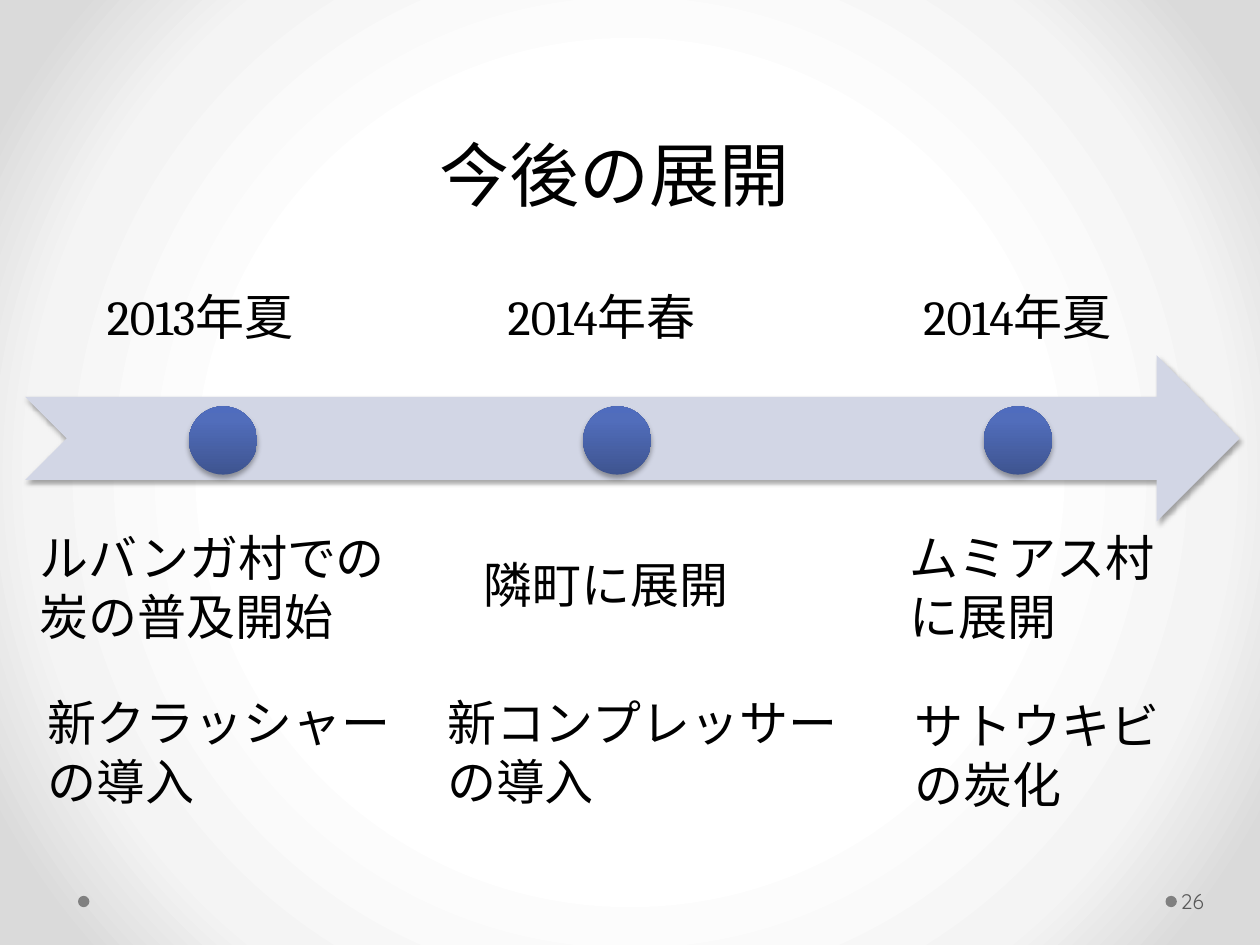
from pptx import Presentation
from pptx.dml.color import RGBColor
from pptx.enum.shapes import MSO_SHAPE as SHAPE
from pptx.enum.text import MSO_ANCHOR as ANCHOR, MSO_AUTO_SIZE as AUTOSIZE, PP_ALIGN as ALIGN
from pptx.oxml import parse_xml
from pptx.oxml.ns import nsdecls, qn
from pptx.util import Pt

rgb = RGBColor.from_string


def set_gradient(fill, element, stops, direction):
    fill.gradient()
    old = element.find(".//" + qn("a:gradFill"))
    gs = "".join(f'<a:gs pos="{pos * 1000}"><a:srgbClr val="{c}"/></a:gs>' for pos, c in stops)
    new = parse_xml(f'<a:gradFill {nsdecls("a")} rotWithShape="1">'
                    f'<a:gsLst>{gs}</a:gsLst>{direction}</a:gradFill>')
    old.getparent().replace(old, new)


def write_text(sp, box, text, size, font="Cambria", color="000000"):
    sp.left, sp.top, sp.width, sp.height = [Pt(v) for v in box]
    tf = sp.text_frame
    tf.text = text
    tf.word_wrap = True
    tf.auto_size = AUTOSIZE.SHAPE_TO_FIT_TEXT
    tf.vertical_anchor = ANCHOR.TOP
    for p in tf.paragraphs:
        p.alignment = ALIGN.LEFT
        for r in p.runs:
            r.font.name, r.font.size = font, Pt(size)
            r.font.color.rgb = rgb(color)
    return tf


prs = Presentation()
prs.slide_width, prs.slide_height = Pt(720), Pt(540)
s = prs.slides.add_slide(prs.slide_layouts[5])

# Background
set_gradient(s.background.fill, s.element,
             [(50, "FFFFFF"), (76, "F4F4F4"), (92, "DADADA")],
             '<a:path path="circle"><a:fillToRect l="50000" t="50000" r="50000" b="50000"/></a:path>')

# Title
write_text(s.shapes.title, (244, 71.3, 217.4, 55.7), "今後の展開", 40)

# Footer dots and page number
for x in (666, 44.6):
    sp = s.shapes.add_shape(SHAPE.OVAL, Pt(x), Pt(511.9), Pt(6.5), Pt(6.5))
    sp.fill.solid()
    sp.fill.fore_color.rgb = rgb("808080")
    sp.line.fill.background()
    sp.shadow.inherit = False
number = s.shapes.add_textbox(0, 0, 0, 0)
tf = write_text(number, (672.5, 500.4, 43.9, 28.8), "26", 12, "Quicksand", "595959")
tf.auto_size = AUTOSIZE.NONE
tf.vertical_anchor = ANCHOR.MIDDLE
tf.margin_left = Pt(2.2)

# Timeline arrow with its milestones
arrow = s.shapes.add_shape(SHAPE.NOTCHED_RIGHT_ARROW, Pt(14.4), Pt(203), Pt(694), Pt(95))
arrow.fill.solid()
arrow.fill.fore_color.rgb = rgb("D2D6E5")
timeline = [arrow]
for x in (108, 333.2, 562.2):
    dot = s.shapes.add_shape(SHAPE.OVAL, Pt(x), Pt(232.2), Pt(39), Pt(39))
    set_gradient(dot.fill, dot.element,
                 [(0, "3E5490"), (80, "516DBB"), (100, "4F6CBE")],
                 '<a:lin ang="16200000" scaled="0"/>')
    timeline.append(dot)
for sp in timeline:
    sp.line.fill.background()
    sp.shadow.inherit = False
    sp.element.spPr.find(qn("a:effectLst")).append(parse_xml(
        f'<a:outerShdw {nsdecls("a")} blurRad="{Pt(3.1)}" dist="{Pt(1.8)}" dir="5400000" '
        'rotWithShape="0"><a:srgbClr val="000000"><a:alpha val="35000"/></a:srgbClr></a:outerShdw>'))

# Dates above the arrow, steps below it
labels = [
    (54, 160, 147.6, 41, "2013年夏"),
    (283, 160, 147.6, 41, "2014年春"),
    (520.6, 160, 147.6, 41, "2014年夏"),
    (15.8, 298, 213.8, 75, "ルバンガ村での炭の普及開始"),
    (269.3, 313.2, 167, 41, "隣町に展開"),
    (512.6, 298, 158.4, 75, "ムミアス村に展開"),
    (20.2, 392.4, 249, 75, "新クラッシャー\nの導入"),
    (248.4, 392.4, 260.6, 75, "新コンプレッサーの導入"),
    (515.5, 393.8, 158.4, 75, "サトウキビの炭化"),
]
for *box, text in labels:
    write_text(s.shapes.add_textbox(0, 0, 0, 0), box, text, 28)

prs.save("out.pptx")
